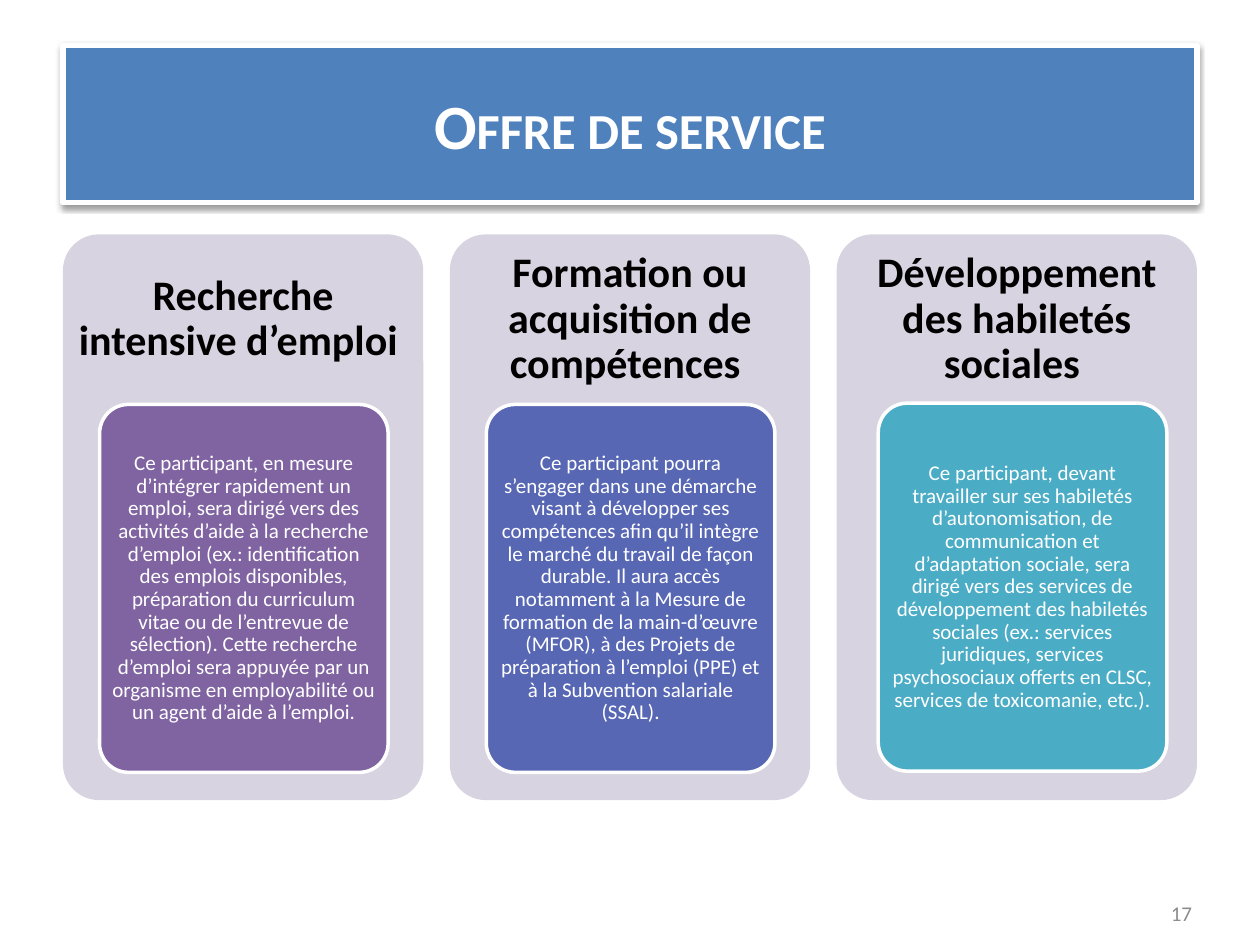
from pptx import Presentation
from pptx.dml.color import RGBColor
from pptx.enum.shapes import MSO_SHAPE as Shape
from pptx.enum.text import MSO_ANCHOR as Anchor, PP_ALIGN as Align
from pptx.oxml import parse_xml
from pptx.oxml.ns import nsdecls
from pptx.util import Inches, Pt

WHITE = RGBColor(0xFF, 0xFF, 0xFF)
BLACK = RGBColor(0x00, 0x00, 0x00)
GREY = RGBColor(0x8C, 0x8C, 0x8C)
BLUE = RGBColor(0x4F, 0x81, 0xBD)
LAVENDER = RGBColor(0xD8, 0xD3, 0xE0)
PURPLE = RGBColor(0x80, 0x64, 0xA2)
INDIGO = RGBColor(0x57, 0x67, 0xB4)
TEAL = RGBColor(0x4B, 0xAC, 0xC6)

LEFT, TOP = 0.5, 1.86
PANEL_WIDTH, PANEL_HEIGHT, PANEL_STEP = 2.86, 4.49, 3.07
HEADING_HEIGHT = 1.35
CARD_WIDTH, CARD_HEIGHT = 2.29, 2.92
CARD_PADDING = 0.07

# Heading, body, card colour, card offset from the panel's left, card top
SERVICES = [
    ("Recherche intensive d’emploi ",
     "Ce participant, en mesure d’intégrer rapidement un emploi, sera dirigé vers "
     "des activités d’aide à la recherche d’emploi (ex.: identification des emplois "
     "disponibles, préparation du curriculum vitae ou de l’entrevue de sélection). "
     "Cette recherche d’emploi sera appuyée par un organisme en employabilité ou un "
     "agent d’aide à l’emploi.",
     PURPLE, 0.29, 3.21),
    ("Formation ou acquisition de compétences ",
     "Ce participant pourra s’engager dans une démarche visant à développer ses "
     "compétences afin qu’il intègre le marché du travail de façon durable. Il aura "
     "accès notamment à la Mesure de formation de la main-d’œuvre (MFOR), à des "
     "Projets de préparation à l’emploi (PPE) et à la Subvention salariale (SSAL).",
     INDIGO, 0.29, 3.21),
    ("Développement des habiletés sociales ",
     "Ce participant, devant travailler sur ses habiletés d’autonomisation, de "
     "communication et d’adaptation sociale, sera dirigé vers des services de "
     "développement des habiletés sociales (ex.: services juridiques, services "
     "psychosociaux offerts en CLSC, services de toxicomanie, etc.).",
     TEAL, 0.33, 3.2),
]


class SlideBuilder:
    """Holds the slide and its shared text and shape style."""

    font_name = "Calibri"

    def __init__(self, slide):
        self.slide = slide

    def set_text(self, shape, text, size, color, bold=False, align=Align.CENTER,
                 spacing=None, margin=None):
        frame = shape.text_frame
        frame.word_wrap = True
        frame.vertical_anchor = Anchor.MIDDLE
        if margin is not None:
            frame.margin_left = frame.margin_right = Inches(margin)
            frame.margin_top = frame.margin_bottom = Inches(margin)
        paragraph = frame.paragraphs[0]
        paragraph.text = text
        paragraph.alignment = align
        if spacing:
            paragraph.line_spacing = spacing
        font = paragraph.font
        font.name, font.size, font.bold = self.font_name, Pt(size), bold
        font.color.rgb = color

    def box(self, kind, left, top, width, height, fill, line_width=0):
        """Add a filled shape, with a white outline if line_width is given."""
        shape = self.slide.shapes.add_shape(
            kind, Inches(left), Inches(top), Inches(width), Inches(height))
        shape.shadow.inherit = False
        shape.fill.solid()
        shape.fill.fore_color.rgb = fill
        if line_width:
            shape.line.color.rgb = WHITE
            shape.line.width = Pt(line_width)
        else:
            shape.line.fill.background()
        return shape

    def rounded(self, *place_and_style):
        shape = self.box(Shape.ROUNDED_RECTANGLE, *place_and_style)
        shape.adjustments[0] = 0.1

    def text(self, left, top, width, height, text, size, color, **style):
        shape = self.slide.shapes.add_textbox(
            Inches(left), Inches(top), Inches(width), Inches(height))
        self.set_text(shape, text, size, color, **style)

    def banner(self, text):
        shape = self.box(Shape.RECTANGLE, LEFT, 0.36, 9, 1.25, BLUE, 3)
        self.set_text(shape, text, 36, WHITE, bold=True)
        run = shape.text_frame.paragraphs[0].runs[0]
        run._r.get_or_add_rPr().set("cap", "small")
        effects = shape._element.spPr.find("{*}effectLst")
        effects.append(parse_xml(
            f'<a:outerShdw {nsdecls("a")} blurRad="{Pt(3.1)}" dist="{Pt(1.6)}" '
            'dir="5400000" rotWithShape="0"><a:srgbClr val="000000">'
            '<a:alpha val="38000"/></a:srgbClr></a:outerShdw>'))

    def service(self, left, heading, body, color, card_offset, card_top):
        self.rounded(left, TOP, PANEL_WIDTH, PANEL_HEIGHT, LAVENDER)
        self.text(left, TOP, PANEL_WIDTH, HEADING_HEIGHT, heading, 24, BLACK,
                  bold=True, spacing=0.9, margin=0.1)
        card_left = left + card_offset
        self.rounded(card_left, card_top, CARD_WIDTH, CARD_HEIGHT, color, 2)
        self.text(card_left + CARD_PADDING, card_top + CARD_PADDING,
                  CARD_WIDTH - 2 * CARD_PADDING, CARD_HEIGHT - 2 * CARD_PADDING,
                  body, 12, WHITE, spacing=0.9, margin=0.03)


def main():
    presentation = Presentation()
    presentation.slide_width, presentation.slide_height = Inches(10), Inches(7.5)
    slide = presentation.slides.add_slide(presentation.slide_layouts[6])
    builder = SlideBuilder(slide)
    builder.banner("Offre de service")
    for index, service in enumerate(SERVICES):
        builder.service(LEFT + index * PANEL_STEP, *service)
    builder.text(7.23, 7.05, 2.33, 0.4, "17", 12, GREY, align=Align.RIGHT)
    presentation.save("out.pptx")


if __name__ == "__main__":
    main()
